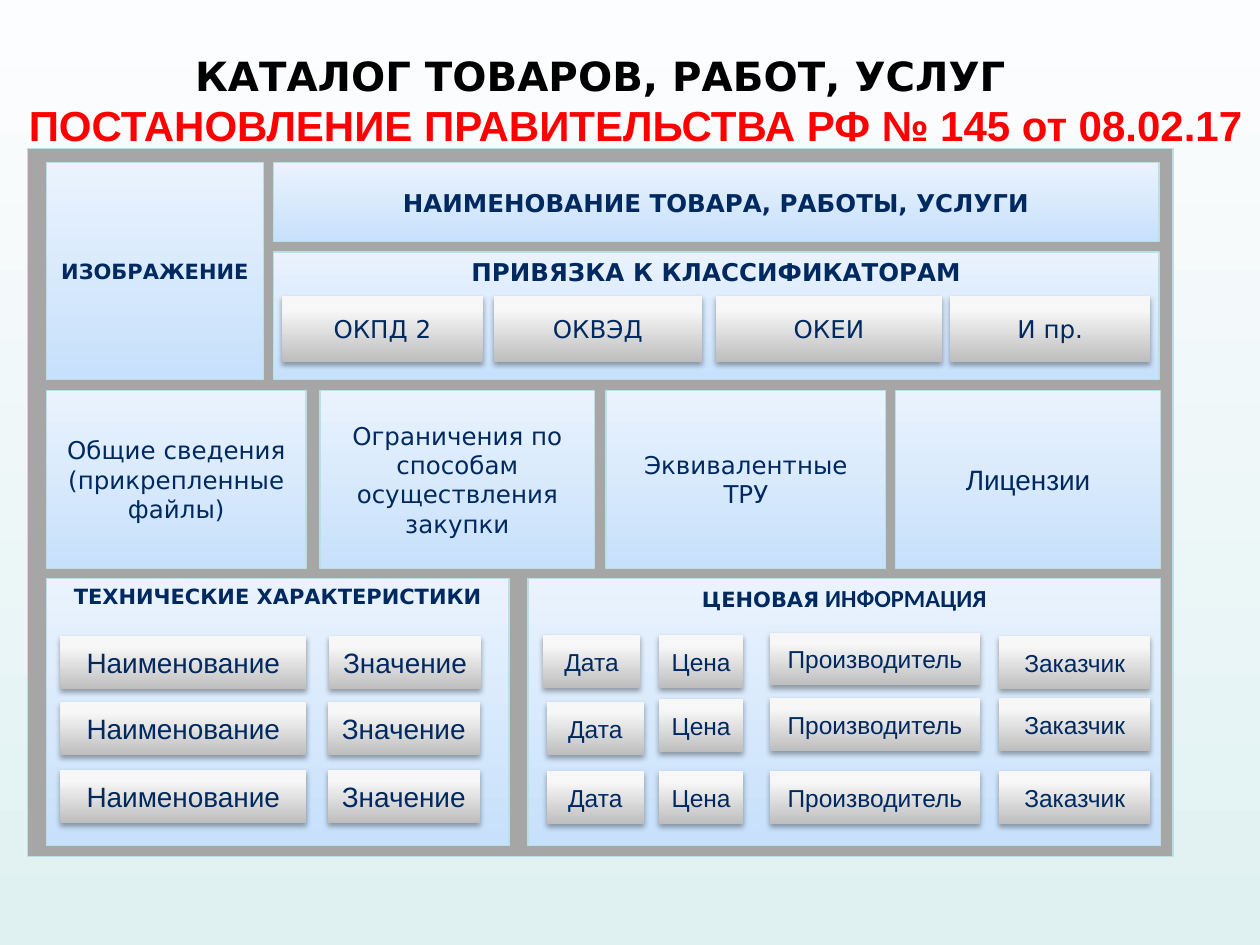
from dataclasses import dataclass

from lxml import etree
from pptx import Presentation
from pptx import util as u
from pptx.dml.color import RGBColor
from pptx.enum import shapes, text
from pptx.oxml.ns import qn

NAVY = RGBColor(0x00, 0x29, 0x60)
BLACK = RGBColor(0x00, 0x00, 0x00)
RED = RGBColor(0xFF, 0x00, 0x00)
FRAME_GREY = RGBColor(0xA6, 0xA6, 0xA6)
EDGE = RGBColor(0xBB, 0xE0, 0xE3)
PANEL_LIGHT = RGBColor(0xEA, 0xF3, 0xFD)
PANEL_DARK = RGBColor(0xC7, 0xE0, 0xFB)
TILE_DARK = RGBColor(0xBE, 0xBE, 0xBE)
TILE_LIGHT = RGBColor(0xF7, 0xF7, 0xF7)
PAGE_TOP = RGBColor(0xFC, 0xFD, 0xFE)
PAGE_BOTTOM = RGBColor(0xE0, 0xF1, 0xF2)

DEJAVU, ARIAL, CALIBRI = "DejaVu Sans", "Arial", "Calibri"
DOWN, UP = 270, 90  # gradient directions, counter-clockwise degrees
TILE_HEIGHT = 0.42


@dataclass(frozen=True)
class Run:
    text: str
    size: float = 14
    font: str = DEJAVU
    bold: bool = False


@dataclass(frozen=True)
class Panel:
    left: float
    top: float
    width: float
    height: float
    runs: tuple[Run, ...]
    heading: bool = False


@dataclass(frozen=True)
class Column:
    label: str
    lefts: tuple[float, ...]
    tops: tuple[float, ...]
    width: float
    size: float = 14


PANELS = (
    Panel(0.37, 1.29, 1.72, 1.72, (Run("ИЗОБРАЖЕНИЕ", 12, bold=True),)),
    Panel(2.17, 1.29, 7.03, 0.63,
          (Run("НАИМЕНОВАНИЕ ТОВАРА, РАБОТЫ, УСЛУГИ", bold=True),)),
    Panel(2.17, 2, 7.03, 1.01,
          (Run("ПРИВЯЗКА К КЛАССИФИКАТОРАМ", bold=True),), heading=True),
    Panel(0.37, 3.1, 2.06, 1.41, (Run("Общие сведения (прикрепленные файлы)"),)),
    Panel(2.54, 3.1, 2.18, 1.41,
          (Run("Ограничения по способам осуществления закупки"),)),
    Panel(4.81, 3.1, 2.22, 1.41, (Run("Эквивалентные ТРУ"),)),
    Panel(7.11, 3.1, 2.1, 1.41, (Run("Лицензии", 16, ARIAL),)),
    Panel(0.37, 4.59, 3.67, 2.12,
          (Run("ТЕХНИЧЕСКИЕ ХАРАКТЕРИСТИКИ", 12, bold=True),), heading=True),
    Panel(4.19, 4.59, 5.02, 2.12,
          (Run("ЦЕНОВАЯ", 12, bold=True),
           Run(" ИНФОРМАЦИЯ", 14, CALIBRI, True)), heading=True),
)

CLASSIFIERS = (
    ("ОКПД 2", 2.24, 1.59),
    ("ОКВЭД", 3.92, 1.65),
    ("ОКЕИ", 5.68, 1.8),
    ("И пр.", 7.54, 1.59),
)

COLUMNS = (
    Column("Наименование", (0.48, 0.48, 0.48), (5.05, 5.57, 6.11), 1.95, 16),
    Column("Значение", (2.61, 2.6, 2.6), (5.05, 5.57, 6.11), 1.21, 16),
    Column("Дата", (4.31, 4.34, 4.34), (5.04, 5.57, 6.12), 0.77),
    Column("Цена", (5.23, 5.23, 5.23), (5.04, 5.55, 6.12), 0.67),
    Column("Производитель", (6.11, 6.11, 6.11), (5.02, 5.54, 6.12), 1.67),
    Column("Заказчик", (7.93, 7.93, 7.93), (5.05, 5.54, 6.12), 1.2),
)


def write(paragraph, content: str, *, size: float, font: str,
          color: RGBColor = NAVY, bold: bool = False) -> None:
    run = paragraph.add_run()
    run.text = content
    run.font.size = u.Pt(size)
    run.font.name = font
    run.font.bold = bold
    run.font.color.rgb = color


def set_gradient(fill, start: RGBColor, end: RGBColor, angle: float,
                 end_position: float = 1.0) -> None:
    fill.gradient()
    fill.gradient_angle = angle
    first, last = fill.gradient_stops
    first.color.rgb, first.position = start, 0
    last.color.rgb, last.position = end, end_position


def add_box(slide, left: float, top: float, width: float, height: float):
    box = slide.shapes.add_shape(
        shapes.MSO_SHAPE.RECTANGLE, u.Inches(left), u.Inches(top),
        u.Inches(width), u.Inches(height))
    box.shadow.inherit = False
    return box


def set_edge(box) -> None:
    box.line.color.rgb = EDGE
    box.line.width = u.Pt(0.75)


def fill_text(box, runs: tuple[Run, ...]) -> None:
    frame = box.text_frame
    frame.word_wrap = True
    frame.vertical_anchor = text.MSO_ANCHOR.MIDDLE
    paragraph = frame.paragraphs[0]
    paragraph.alignment = text.PP_ALIGN.CENTER
    for run in runs:
        write(paragraph, run.text, size=run.size, font=run.font, bold=run.bold)


def add_panel(slide, panel: Panel) -> None:
    box = add_box(slide, panel.left, panel.top, panel.width, panel.height)
    set_gradient(box.fill, PANEL_LIGHT, PANEL_DARK, DOWN)
    set_edge(box)
    fill_text(box, panel.runs)
    if panel.heading:
        frame = box.text_frame
        frame.vertical_anchor = text.MSO_ANCHOR.TOP
        frame.margin_left = frame.margin_right = u.Inches(0.04)
        frame.margin_top = frame.margin_bottom = u.Inches(0.04)


def add_tile(slide, left: float, top: float, width: float, height: float,
             run: Run) -> None:
    tile = add_box(slide, left, top, width, height)
    set_gradient(tile.fill, TILE_DARK, TILE_LIGHT, UP, 0.8)
    tile.line.fill.background()
    fill_text(tile, (run,))
    tile.text_frame.margin_left = tile.text_frame.margin_right = u.Inches(0.05)
    # Soft shadow below the tile
    effects = tile._element.spPr.find(qn("a:effectLst"))
    shadow = etree.SubElement(
        effects, qn("a:outerShdw"), blurRad="40000", dist="23000",
        dir="5400000", rotWithShape="0")
    color = etree.SubElement(shadow, qn("a:srgbClr"), val="000000")
    etree.SubElement(color, qn("a:alpha"), val="35000")


def add_title(slide) -> None:
    title = slide.shapes.add_textbox(
        u.Inches(0.05), u.Inches(0.36), u.Inches(9.95), u.Inches(1.02))
    frame = title.text_frame
    frame.word_wrap = True
    frame.margin_right = 0
    catalogue, decree = frame.paragraphs[0], frame.add_paragraph()
    for paragraph, indent in ((catalogue, 1.4), (decree, 0.08)):
        paragraph._p.get_or_add_pPr().set("indent", str(u.Inches(indent)))
    write(catalogue, "КАТАЛОГ ТОВАРОВ, РАБОТ, УСЛУГ",
          size=23, font=DEJAVU, color=BLACK, bold=True)
    write(decree, "ПОСТАНОВЛЕНИЕ ПРАВИТЕЛЬСТВА РФ № 145 от 08.02.17",
          size=24, font=ARIAL, color=RED, bold=True)


def main() -> None:
    deck = Presentation()
    deck.slide_width, deck.slide_height = u.Inches(10), u.Inches(7.5)
    slide = deck.slides.add_slide(deck.slide_layouts[6])
    set_gradient(slide.background.fill, PAGE_TOP, PAGE_BOTTOM, DOWN)

    # Catalogue card frame
    frame = add_box(slide, 0.22, 1.18, 9.09, 5.62)
    frame.fill.solid()
    frame.fill.fore_color.rgb = FRAME_GREY
    set_edge(frame)

    # Card sections
    for panel in PANELS:
        add_panel(slide, panel)

    # Classifiers
    for label, left, width in CLASSIFIERS:
        add_tile(slide, left, 2.35, width, 0.52, Run(label))

    # Characteristics and price entries
    for column in COLUMNS:
        for left, top in zip(column.lefts, column.tops):
            add_tile(slide, left, top, column.width, TILE_HEIGHT,
                     Run(column.label, column.size, ARIAL))

    add_title(slide)
    deck.save("out.pptx")


if __name__ == "__main__":
    main()
